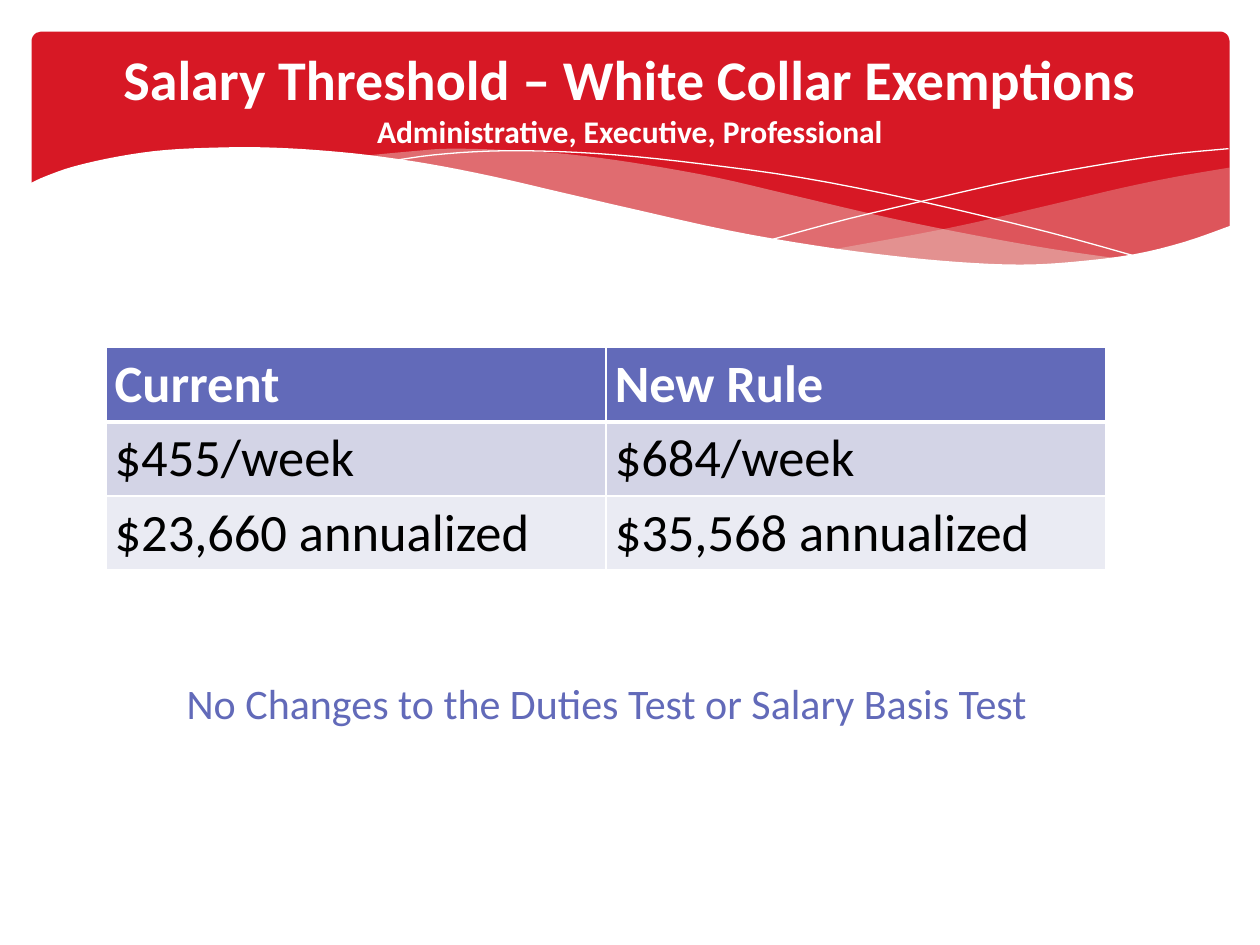
from lxml import etree
from pptx import Presentation
from pptx import util as u
from pptx.dml.color import RGBColor
from pptx.enum import shapes as sh, text as tx
from pptx.oxml import ns

# Content
HEAD = [("Salary Threshold – White Collar Exemptions", 32),
        ("Administrative, Executive, Professional", 18)]
ROWS = [("Current", "New Rule"),
        ("$455/week", "$684/week"),
        ("$23,660 annualized", "$35,568 annualized")]
FILLS = ["626AB9", "D3D4E6", "EAEBF3"]
NOTE = "No Changes to the Duties Test or Salary Basis Test"
FONT, RED, WHITE, BLUE, CREAM = "Calibri", "D71825", "FFFFFF", "626AB9", "EEECE1"

# Wave bands: (edges, fill, opacity in percent); each edge is a smooth curve
BANDS = [
    ([[(9.76, 1.33), (9.35, 1.4), (8.91, 1.49), (8.32, 1.63), (7.53, 1.81),
       (6.61, 1.98)],
      [(6.61, 1.98), (7.05, 2.04), (7.57, 2.09), (8.03, 2.11), (8.54, 2.09),
       (8.97, 2.03), (9.35, 1.95), (9.76, 1.8)]], CREAM, 29),
    ([[(8.93, 2.06), (8.37, 1.98), (7.75, 1.87), (7.06, 1.73), (6.29, 1.55),
       (5.69, 1.41), (5.14, 1.31), (4.65, 1.24), (4.2, 1.2), (3.61, 1.18),
       (3.28, 1.2), (2.86, 1.24)],
      [(2.86, 1.24), (3.42, 1.32), (4.04, 1.44), (4.49, 1.55), (5.3, 1.73),
       (6.01, 1.88), (6.65, 1.99), (7.22, 2.07), (7.73, 2.1), (8.18, 2.11),
       (8.57, 2.1), (8.93, 2.06)]], CREAM, 40),
]
LINES = [
    [(3.09, 1.28), (3.44, 1.23), (3.87, 1.2), (4.33, 1.2), (4.89, 1.23),
     (5.56, 1.3), (6.36, 1.41), (7.27, 1.59), (8.31, 1.84), (9.07, 2.05)],
    [(6.13, 1.9), (6.72, 1.74), (7.48, 1.56), (8.06, 1.43), (8.66, 1.32),
     (9.24, 1.23), (9.75, 1.18)],
]
BASE = ([[(9.77, 1.79), (9.4, 1.92), (8.99, 2.02), (8.5, 2.08), (8.09, 2.1),
          (7.61, 2.08), (7.08, 2.03), (6.48, 1.95), (5.79, 1.83), (5.03, 1.66),
          (4.47, 1.53), (3.91, 1.4), (3.4, 1.3), (2.92, 1.23), (2.5, 1.19),
          (2.11, 1.17), (1.77, 1.17), (1.32, 1.19), (0.95, 1.24), (0.59, 1.32),
          (0.36, 1.4), (0.23, 1.46)],
         [(0.23, 2.62), (9.77, 2.62)]], WHITE, 100)


def rgb(code):
    return RGBColor.from_string(code)


def paint(item, code):
    item.fill.solid()
    item.fill.fore_color.rgb = rgb(code)


def style(font, code, size=None, bold=False):
    font.name, font.bold, font.color.rgb = FONT, bold, rgb(code)
    if size:
        font.size = u.Pt(size)


def smooth(pts, steps=4):
    """Catmull-Rom curve through the points."""
    if len(pts) < 3:
        return pts
    ends = [pts[0], *pts, pts[-1]]
    out = []
    for a, b, c, d in zip(ends, ends[1:], ends[2:], ends[3:]):
        for i in range(steps):
            t = i / steps
            out.append(tuple(
                q + t * ((r - p) + t * ((2 * p - 5 * q + 4 * r - s)
                                        + t * (3 * q - p - 3 * r + s))) / 2
                for p, q, r, s in zip(a, b, c, d)))
    return out + [pts[-1]]


def trace(slide, edges, close):
    pts = [(u.Inches(x), u.Inches(y)) for e in edges for x, y in smooth(e)]
    pen = slide.shapes.build_freeform(*pts[0])
    pen.add_line_segments(pts[1:], close=close)
    shape = pen.convert_to_shape()
    shape.shadow.inherit = False
    return shape


def band(slide, edges, code, alpha):
    shape = trace(slide, edges, True)
    paint(shape, code)
    shape.line.fill.background()
    if alpha < 100:
        clr = shape.fill._xPr.find(".//" + ns.qn("a:srgbClr"))
        etree.SubElement(clr, ns.qn("a:alpha"), val=str(alpha * 1000))


def border(cell, widths):
    props = cell._tc.get_or_add_tcPr()
    for side, width in zip("LRTB", widths):
        ln = etree.SubElement(props, ns.qn("a:ln" + side), w=str(u.Pt(width)))
        fill = etree.SubElement(ln, ns.qn("a:solidFill"))
        etree.SubElement(fill, ns.qn("a:srgbClr"), val=WHITE)


def main():
    prs = Presentation()
    prs.slide_width, prs.slide_height = u.Inches(10), u.Inches(7.5)
    slide = prs.slides.add_slide(prs.slide_layouts[5])

    # Banner and waves
    box = map(u.Inches, (0.25, 0.25, 9.51, 2.31))
    banner = slide.shapes.add_shape(sh.MSO_SHAPE.ROUNDED_RECTANGLE, *box)
    banner.adjustments[0] = 0.034
    banner.shadow.inherit = False
    paint(banner, RED)
    banner.line.fill.background()
    for item in BANDS:
        band(slide, *item)
    for pts in LINES:
        wave = trace(slide, [pts], False)
        wave.fill.background()
        wave.line.color.rgb = rgb(WHITE)
        wave.line.width = u.Pt(0)
    band(slide, *BASE)

    # Title, brought in front of the banner
    title = slide.shapes.title
    title.left, title.top, title.width, title.height = map(
        u.Inches, (0.5, 0.25, 9, 1.04))
    slide.shapes._spTree.append(title._element)
    frame = title.text_frame
    frame.auto_size = tx.MSO_AUTO_SIZE.NONE
    frame.vertical_anchor = tx.MSO_ANCHOR.MIDDLE
    para = frame.paragraphs[0]
    para.alignment = tx.PP_ALIGN.CENTER
    for i, (words, size) in enumerate(HEAD):
        if i:
            para.add_line_break()
        run = para.add_run()
        run.text = words
        style(run.font, WHITE, size, True)

    # Salary table
    box = map(u.Inches, (0.84, 2.76, 7.94, 1.74))
    table = slide.shapes.add_table(len(ROWS), 2, *box).table
    for r, (row, code) in enumerate(zip(ROWS, FILLS)):
        table.rows[r].height = u.Inches(0.58)
        for c, words in enumerate(row):
            cell = table.cell(r, c)
            cell.text = words
            cell.margin_left = cell.margin_right = u.Inches(0.07)
            cell.margin_top = cell.margin_bottom = u.Inches(0.04)
            border(cell, (1, 1, 3 if r == 1 else 1, 3 if r == 0 else 1))
            paint(cell, code)
            style(cell.text_frame.paragraphs[0].font,
                  "000000" if r else WHITE, 30, r == 0)

    # Note below the table
    box = map(u.Inches, (0.84, 5.33, 7.95, 0.5))
    frame = slide.shapes.add_textbox(*box).text_frame
    frame.word_wrap = True
    para = frame.paragraphs[0]
    para.text = NOTE
    para.alignment = tx.PP_ALIGN.CENTER
    style(para.font, BLUE, 24)

    prs.save("out.pptx")


if __name__ == "__main__":
    main()
